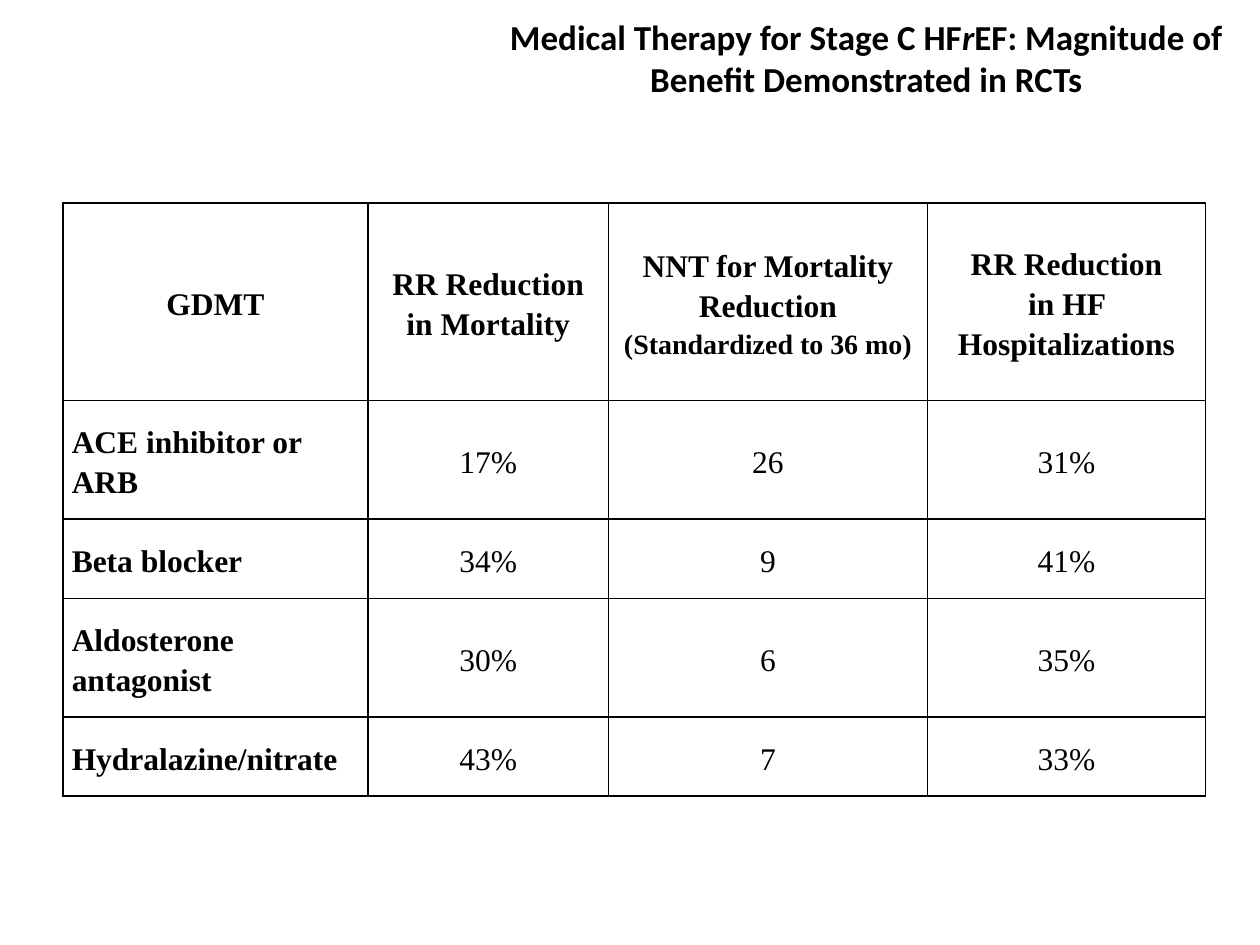
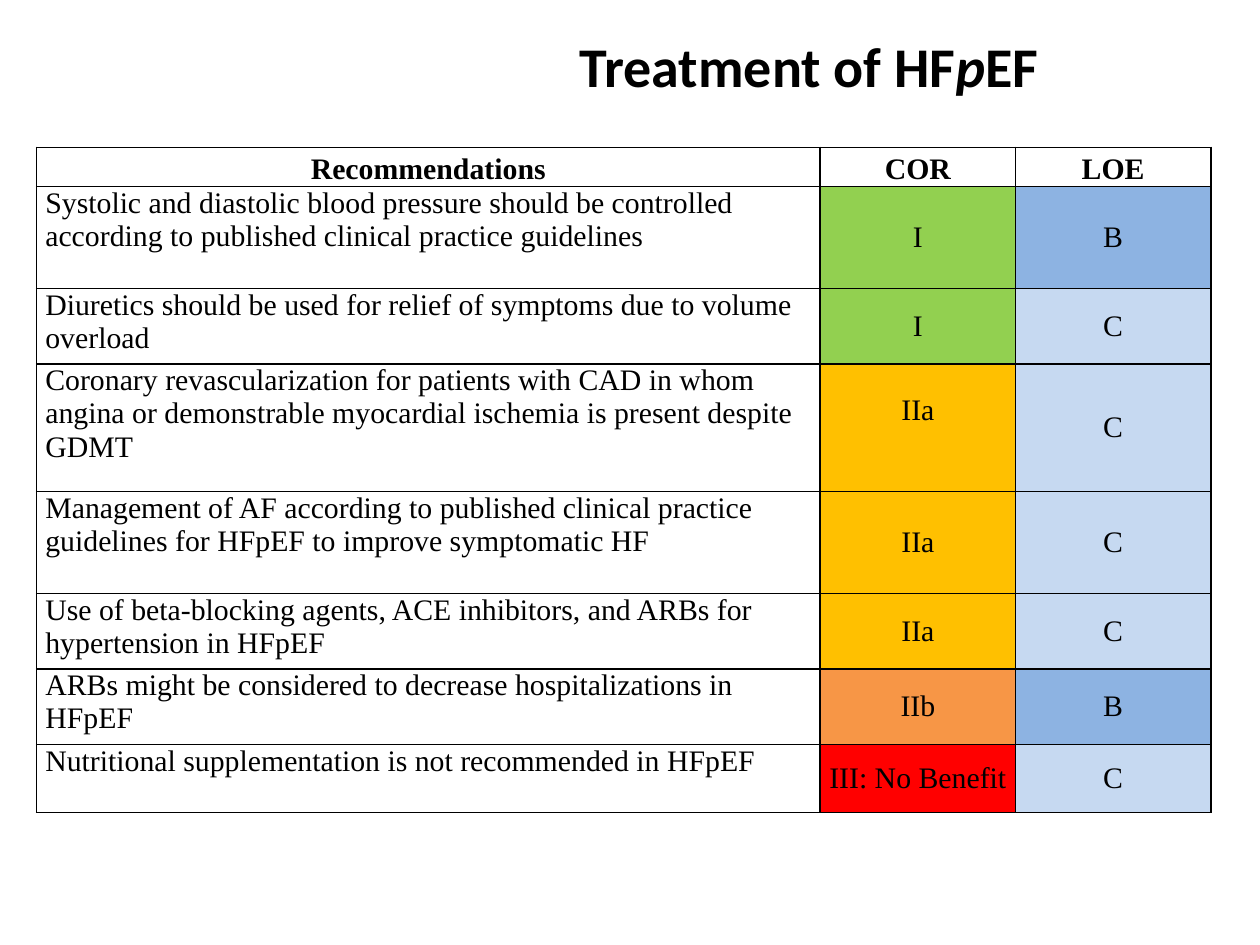
from lxml.etree import SubElement
from pptx import Presentation
from pptx.dml.color import RGBColor
from pptx.enum.text import MSO_ANCHOR, MSO_AUTO_SIZE, PP_ALIGN
from pptx.oxml.ns import qn
from pptx.util import Inches, Pt

GRID_COLUMNS, GRID_ROWS = 100, 75
GRID_UNIT = Inches(0.1)
TITLE_FONT, TABLE_FONT = "Calibri", "Times New Roman"
BLACK = "000000"
CLASS_FILLS = {"I": "92D050", "IIa": "FFC000", "IIb": "F79646", "III: No Benefit": "FF0000"}
EVIDENCE_FILLS = {"B": "8DB3E2", "C": "C6D9F1"}

THERAPY_HEADERS = [
    ["GDMT"],
    ["RR Reduction in Mortality"],
    ["NNT for Mortality Reduction", [("(Standardized to 36 mo)", {"size": 16})]],
    ["RR Reduction", "in HF Hospitalizations"],
]
THERAPIES = [
    ("ACE inhibitor or ARB", "17%", "26", "31%"),
    ("Beta blocker", "34%", "9", "41%"),
    ("Aldosterone antagonist", "30%", "6", "35%"),
    ("Hydralazine/nitrate", "43%", "7", "33%"),
]
RECOMMENDATIONS = [
    ("Systolic and diastolic blood pressure should be controlled according to "
     "published clinical practice guidelines", "I", "B"),
    ("Diuretics should be used for relief of symptoms due to volume overload", "I", "C"),
    ("Coronary revascularization for patients with CAD in whom angina or demonstrable "
     "myocardial ischemia is present despite GDMT", "IIa", "C"),
    ("Management of AF according to published clinical practice guidelines for HFpEF "
     "to improve symptomatic HF", "IIa", "C"),
    ("Use of beta-blocking agents, ACE inhibitors, and ARBs for hypertension in HFpEF",
     "IIa", "C"),
    ("ARBs might be considered to decrease hospitalizations in HFpEF", "IIb", "B"),
    ("Nutritional supplementation is not recommended in HFpEF", "III: No Benefit", "C"),
]
REVASCULARIZATION_ROW = 3


def grid(units):
    return round(units * GRID_UNIT)


def color(hex_string):
    return RGBColor.from_string(hex_string)


def write_text(frame, paragraphs, font=TABLE_FONT, size=18, bold=False, italic=False,
               align=PP_ALIGN.CENTER, line_spacing=1.0):
    """Fill a text frame; a paragraph is a string or a list of (text, format) runs."""
    for index, runs in enumerate(paragraphs):
        paragraph = frame.add_paragraph() if index else frame.paragraphs[0]
        paragraph.alignment = align
        paragraph.line_spacing = line_spacing
        for text, changes in ([(runs, {})] if isinstance(runs, str) else runs):
            run = paragraph.add_run()
            run.text = text
            run.font.name = font
            run.font.size = Pt(changes.get("size", size))
            run.font.bold = bold
            run.font.italic = changes.get("italic", italic)
            run.font.color.rgb = color(BLACK)


def add_titled_slide(presentation, runs, size, box):
    slide = presentation.slides.add_slide(presentation.slide_layouts[5])
    title = slide.shapes.title
    title.left, title.top, title.width, title.height = map(grid, box)
    frame = title.text_frame
    frame.auto_size = MSO_AUTO_SIZE.NONE
    frame.word_wrap = True
    frame.vertical_anchor = MSO_ANCHOR.MIDDLE
    write_text(frame, [runs], font=TITLE_FONT, size=size, bold=True)
    return slide


def add_grid_table(slide, left, top, column_widths, row_heights):
    frame = slide.shapes.add_table(
        len(row_heights), len(column_widths), grid(left), grid(top),
        grid(sum(column_widths)), grid(sum(row_heights)))
    table = frame.table
    table.first_row = table.horz_banding = False
    for column, width in zip(table.columns, column_widths):
        column.width = grid(width)
    for row, height in zip(table.rows, row_heights):
        row.height = grid(height)
    return table


def add_borders(cell):
    properties = cell._tc.get_or_add_tcPr()
    for side in ("lnL", "lnR", "lnT", "lnB"):
        line = SubElement(properties, qn(f"a:{side}"), w=str(Pt(1)))
        fill = SubElement(line, qn("a:solidFill"))
        SubElement(fill, qn("a:srgbClr"), val=BLACK)


def fill_cell(cell, paragraphs, fill=None, anchor=MSO_ANCHOR.MIDDLE, margin_top=0,
              **text_format):
    add_borders(cell)
    if fill:
        cell.fill.solid()
        cell.fill.fore_color.rgb = color(fill)
    else:
        cell.fill.background()
    cell.margin_left = cell.margin_right = Inches(0.07)
    cell.margin_top, cell.margin_bottom = Inches(margin_top), 0
    cell.vertical_anchor = anchor
    write_text(cell.text_frame, paragraphs, **text_format)


def add_therapy_slide(presentation):
    slide = add_titled_slide(
        presentation,
        [("Medical Therapy for Stage C HF", {}), ("r", {"italic": True}),
         ("EF: Magnitude of Benefit Demonstrated in RCTs", {})],
        size=20, box=(37.5, -1.7, 62.5, 12.5))
    table = add_grid_table(slide, 5, 16.1, [24.2, 19.1, 25.3, 22.1],
                           [15.7, 9.4, 6.3, 9.4, 6.3])
    rows = [THERAPY_HEADERS] + [[[value] for value in therapy] for therapy in THERAPIES]
    for row, contents in enumerate(rows):
        for column, paragraphs in enumerate(contents):
            is_therapy_name = row > 0 and column == 0
            fill_cell(table.cell(row, column), paragraphs, margin_top=0.01,
                      bold=row == 0 or column == 0, line_spacing=1.15,
                      align=PP_ALIGN.LEFT if is_therapy_name else PP_ALIGN.CENTER)


def add_recommendation_slide(presentation):
    slide = add_titled_slide(
        presentation, [("Treatment of HF", {}), ("p", {"italic": True}), ("EF", {})],
        size=32, box=(19.2, 1.7, 90, 7))
    table = add_grid_table(slide, 2.9, 11.7, [62.2, 15.5, 15.5],
                           [3.1, 8.1, 6, 10.1, 8.1, 6, 6, 5.4])
    for column, header in enumerate(("Recommendations", "COR", "LOE")):
        fill_cell(table.cell(0, column), [header], anchor=MSO_ANCHOR.TOP,
                  size=17, bold=True, line_spacing=1.15)
    for row, (advice, strength, evidence) in enumerate(RECOMMENDATIONS, start=1):
        fill_cell(table.cell(row, 0), [advice], anchor=MSO_ANCHOR.TOP, size=17,
                  align=PP_ALIGN.LEFT)
        fill_cell(table.cell(row, 1), [strength], fill=CLASS_FILLS[strength], size=17)
        fill_cell(table.cell(row, 2), [evidence], fill=EVIDENCE_FILLS[evidence], size=17)
    table.cell(REVASCULARIZATION_ROW, 1).margin_bottom = Inches(0.27)


def main():
    presentation = Presentation()
    presentation.slide_width = grid(GRID_COLUMNS)
    presentation.slide_height = grid(GRID_ROWS)
    add_therapy_slide(presentation)
    add_recommendation_slide(presentation)
    presentation.save("out.pptx")


if __name__ == "__main__":
    main()
